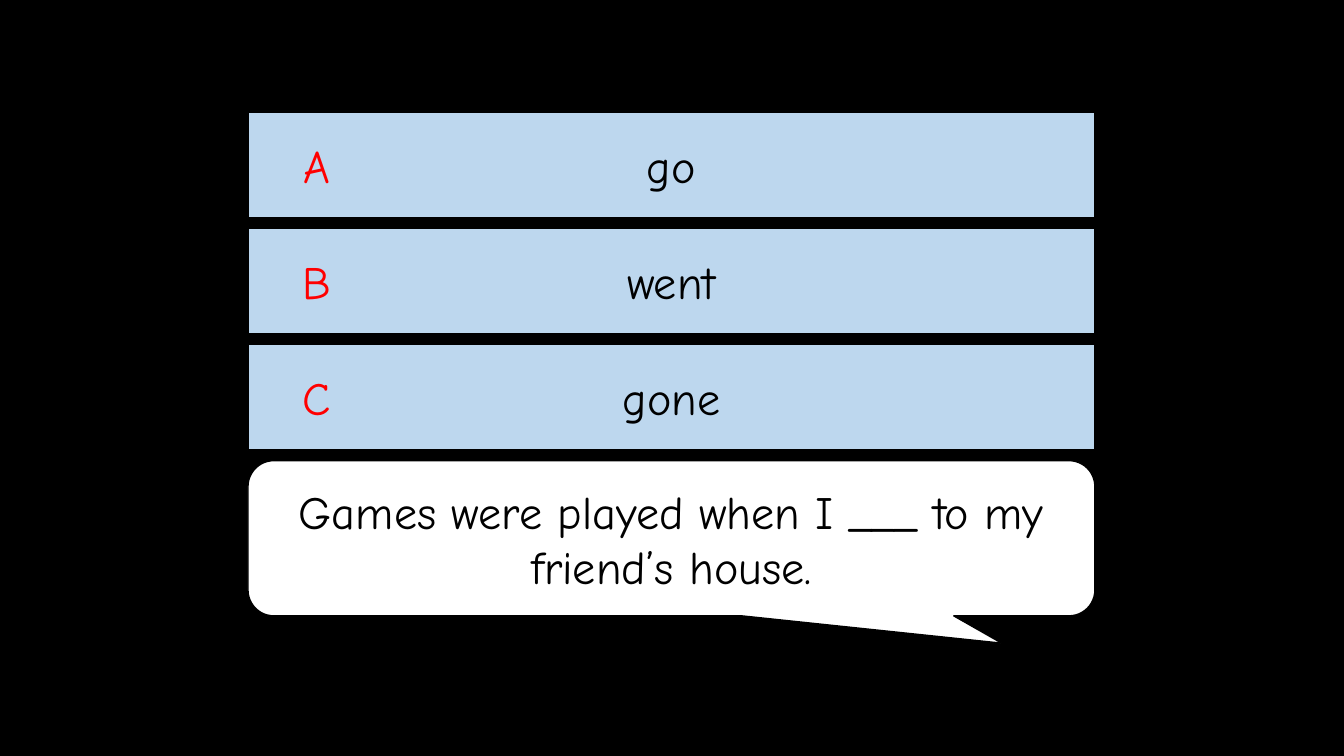
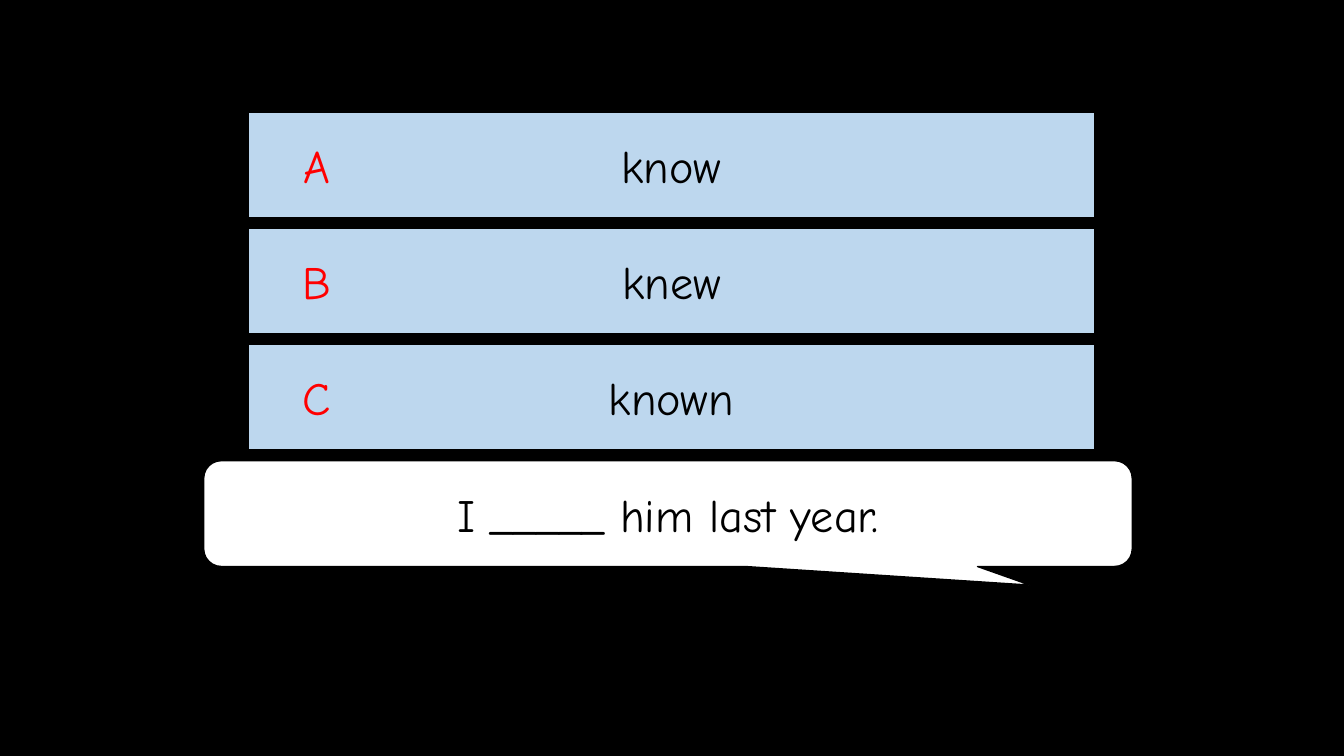
"""Build two multiple-choice grammar slides."""
import dataclasses

import pptx
import pptx.dml.color
import pptx.enum.shapes
import pptx.enum.text
import pptx.shapes.autoshape
import pptx.slide
import pptx.util

Inches = pptx.util.Inches
Color = pptx.dml.color.RGBColor
Shape = pptx.shapes.autoshape.Shape
Slide = pptx.slide.Slide
Kind = pptx.enum.shapes.MSO_SHAPE


@dataclasses.dataclass(frozen=True)
class Theme:
    black: Color = Color.from_string("000000")
    white: Color = Color.from_string("FFFFFF")
    blue: Color = Color.from_string("BDD7EE")
    red: Color = Color.from_string("FF0000")
    font: str = "Comic Neue"
    size: float = 33
    edge: float = 1


@dataclasses.dataclass(frozen=True)
class Box:
    left: float
    top: float
    width: float
    height: float

    def place(self) -> tuple[pptx.util.Length, ...]:
        return tuple(Inches(v) for v in dataclasses.astuple(self))


@dataclasses.dataclass(frozen=True)
class Quiz:
    prompt: str
    bubble: Box
    words: tuple[str, str, str]


THEME = Theme()
TOP, BASE = 1.11, 4.57
QUIZZES = (
    Quiz("Games were played when I ___ to my friend’s house.",
         Box(2.46, BASE, 8.4, 1.54), ("go", "went", "gone")),
    Quiz("I _____ him last year.",
         Box(2.02, BASE, 9.21, 1.05), ("know", "knew", "known")),
)


def write(shape: Shape, text: str, *, color: Color = THEME.black,
          size: float = THEME.size) -> None:
    frame = shape.text_frame
    frame.word_wrap = True
    frame.vertical_anchor = pptx.enum.text.MSO_ANCHOR.MIDDLE
    line = frame.paragraphs[0]
    line.alignment = pptx.enum.text.PP_ALIGN.CENTER
    run = line.add_run()
    run.text = text
    run.font.name = THEME.font
    run.font.size = pptx.util.Pt(size)
    run.font.color.rgb = color


def panel(slide: Slide, kind: Kind, box: Box, fill: Color, text: str) -> Shape:
    shape = slide.shapes.add_shape(kind, *box.place())
    shape.shadow.inherit = False
    shape.fill.solid()
    shape.fill.fore_color.rgb = fill
    shape.line.color.rgb = THEME.black
    shape.line.width = pptx.util.Pt(THEME.edge)
    write(shape, text)
    return shape


def draw(slide: Slide, quiz: Quiz) -> None:
    bubble = panel(slide, Kind.ROUNDED_RECTANGULAR_CALLOUT, quiz.bubble,
                   THEME.white, quiz.prompt)
    for index, value in enumerate((0.39, 0.676, 0.167)):
        bubble.adjustments[index] = value
    step = (BASE - TOP) / len(quiz.words)
    for index, (letter, word) in enumerate(zip("ABC", quiz.words)):
        top = TOP + index * step
        panel(slide, Kind.RECTANGLE, Box(2.46, top, 8.4, 1.05),
              THEME.blue, word)
        label = slide.shapes.add_textbox(
            *Box(2.7, top + 0.16, 0.89, 0.73).place())
        write(label, letter, color=THEME.red)


def main() -> None:
    deck = pptx.Presentation()
    deck.slide_width, deck.slide_height = Inches(13.33), Inches(7.5)
    fill = deck.slide_master.background.fill
    fill.solid()
    fill.fore_color.rgb = THEME.black
    for quiz in QUIZZES:
        draw(deck.slides.add_slide(deck.slide_layouts[6]), quiz)
    deck.save("out.pptx")


if __name__ == "__main__":
    main()
